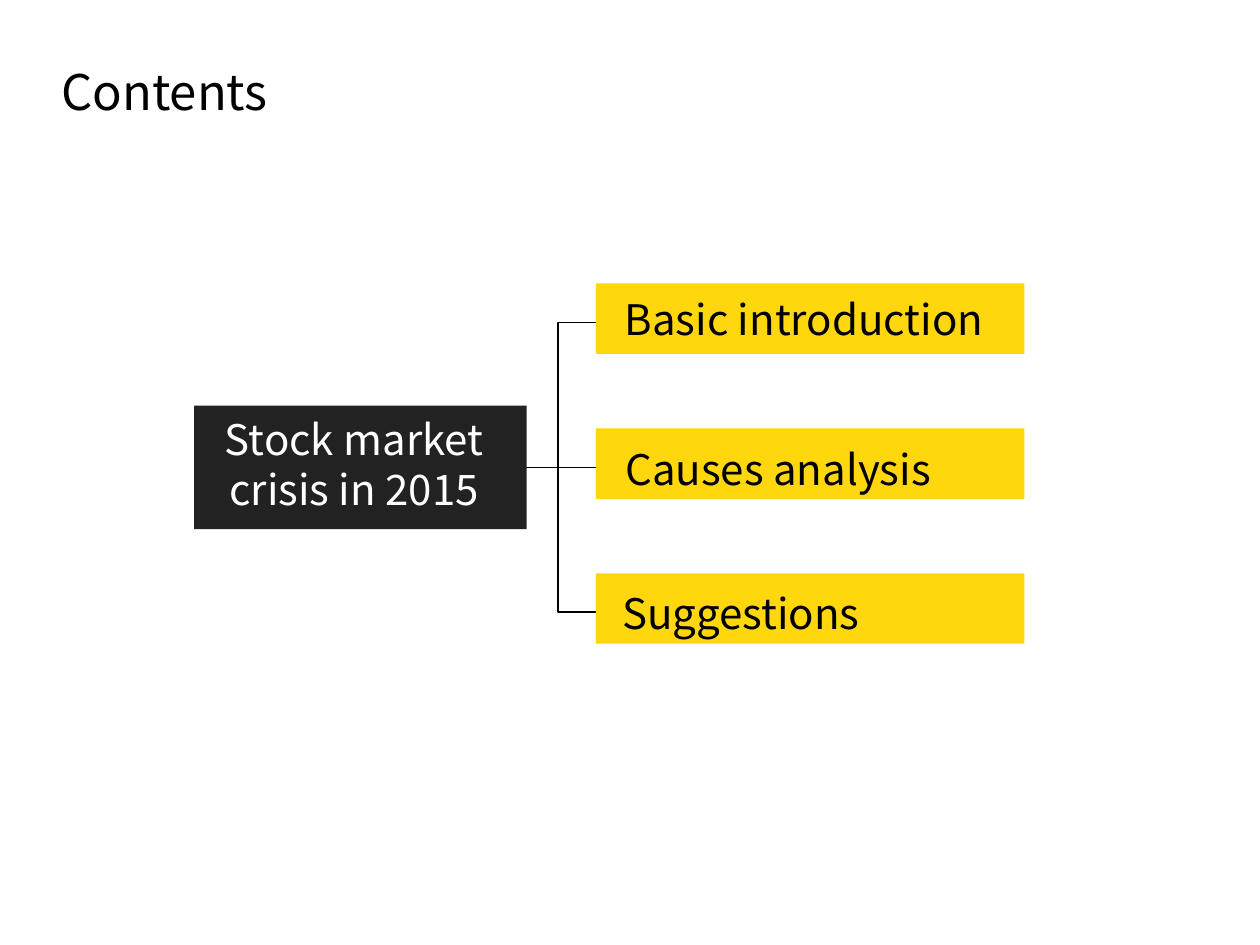
"""Build a contents slide: one root topic branching into three sections."""
from dataclasses import dataclass

from lxml import etree
from pptx import Presentation
from pptx.dml.color import RGBColor
from pptx.enum.shapes import MSO_CONNECTOR, MSO_SHAPE
from pptx.enum.text import MSO_AUTO_SIZE, PP_ALIGN
from pptx.oxml.ns import qn
from pptx.util import Inches, Pt

RECTANGLE = MSO_SHAPE.RECTANGLE
STRAIGHT = MSO_CONNECTOR.STRAIGHT
GROW = MSO_AUTO_SIZE.SHAPE_TO_FIT_TEXT
LEFT, CENTER = PP_ALIGN.LEFT, PP_ALIGN.CENTER


@dataclass(frozen=True)
class Theme:
    font: str = "Noto Sans CJK SC"
    black: RGBColor = RGBColor(0x00, 0x00, 0x00)
    white: RGBColor = RGBColor(0xFF, 0xFF, 0xFF)
    charcoal: RGBColor = RGBColor(0x22, 0x22, 0x22)
    yellow: RGBColor = RGBColor(0xFF, 0xD7, 0x0C)
    title_size: Pt = Pt(28)
    body_size: Pt = Pt(24)
    line_width: Pt = Pt(1)


theme = Theme()
presentation = Presentation()
presentation.slide_width, presentation.slide_height = Inches(10), Inches(7.5)
slide = presentation.slides.add_slide(presentation.slide_layouts[6])


def add_box(left, top, width, height, color):
    shape = slide.shapes.add_shape(
        RECTANGLE, Inches(left), Inches(top), Inches(width), Inches(height))
    shape.shadow.inherit = False
    shape.fill.solid()
    shape.fill.fore_color.rgb = color
    shape.line.fill.background()


def add_label(text, left, top, width, height, size, color, align=LEFT, wrap=True):
    label = slide.shapes.add_textbox(
        Inches(left), Inches(top), Inches(width), Inches(height))
    label.text_frame.word_wrap = wrap
    label.text_frame.auto_size = GROW
    paragraph = label.text_frame.paragraphs[0]
    paragraph.alignment = align
    run = paragraph.add_run()
    run.text = text
    run.font.name = theme.font
    run.font.size = size
    run.font.color.rgb = color


add_label("Contents", 0.39, 0.44, 2.8, 0.57, theme.title_size, theme.black)

trunk_x, bend_x, section_x = 4.13, 4.43, 4.73
trunk_y, section_pitch = 3.71, 1.15

for offset in (section_pitch, -section_pitch):
    builder = slide.shapes.build_freeform(Inches(trunk_x), Inches(trunk_y))
    branch_y = trunk_y + offset
    corners = [(bend_x, trunk_y), (bend_x, branch_y), (section_x, branch_y)]
    builder.add_line_segments(
        [(Inches(x), Inches(y)) for x, y in corners], close=False)
    branch = builder.convert_to_shape()
    branch.shadow.inherit = False
    branch.fill.background()
    branch.line.color.rgb = theme.black
    branch.line.width = theme.line_width

middle_branch = slide.shapes.add_connector(
    STRAIGHT, Inches(trunk_x), Inches(trunk_y), Inches(section_x), Inches(trunk_y))
middle_branch.line.color.rgb = theme.black
middle_branch.line.width = theme.line_width
etree.SubElement(middle_branch._element.spPr, qn("a:effectLst"))

add_box(1.54, 3.22, 2.64, 0.98, theme.charcoal)
add_label("Stock market crisis in 2015", 1.6, 3.23, 2.42, 0.91,
          theme.body_size, theme.white, CENTER)

sections = [
    ("Basic introduction", 4.86, 2.28, 3.2, LEFT),
    ("Causes analysis", 4.84, 3.47, 2.67, CENTER),
    ("Suggestions", 4.84, 4.61, 2.17, LEFT),
]
for index, (text, left, top, width, align) in enumerate(sections):
    add_box(section_x, 2.25 + index * section_pitch, 3.4, 0.56, theme.yellow)
    add_label(text, left, top, width, 0.5,
              theme.body_size, theme.black, align, wrap=False)

presentation.save("out.pptx")
